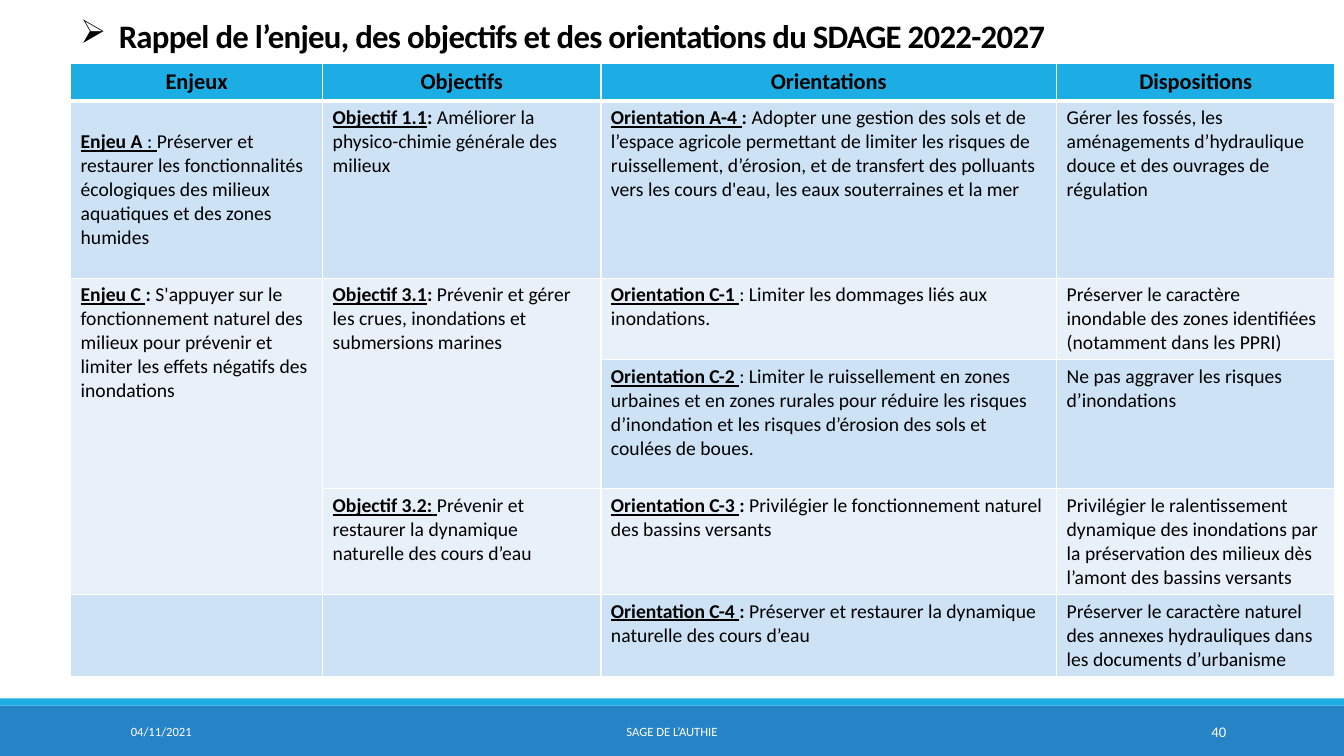
from lxml.etree import SubElement
from pptx import Presentation
from pptx.dml.color import RGBColor
from pptx.enum.shapes import MSO_SHAPE as Shape
from pptx.enum.text import MSO_ANCHOR as Anchor, PP_ALIGN as Align
from pptx.oxml import parse_xml
from pptx.oxml.ns import nsdecls, qn
from pptx.util import Inches, Pt

BLACK = RGBColor(0x00, 0x00, 0x00)
WHITE = RGBColor(0xFF, 0xFF, 0xFF)
CYAN = RGBColor(0x1C, 0xAD, 0xE4)
BLUE = RGBColor(0x26, 0x83, 0xC6)
BAND_DARK = RGBColor(0xCD, 0xE3, 0xF5)
BAND_LIGHT = RGBColor(0xE8, 0xF1, 0xFA)

COLUMN_WIDTHS = [2.5, 2.76, 4.52, 2.76]
ROW_HEIGHTS = [0.37, 1.76, 0.81, 1.28, 1.05, 0.81]
HEADERS = ["Enjeux", "Objectifs", "Orientations", "Dispositions"]
MERGES = [((2, 0), (4, 0)), ((2, 1), (3, 1))]

# Each body cell is a list of (style, text): b is bold, u is underlined
BODY = [
    [[("bu", "Enjeu A "), ("u", ": "),
      ("", "Préserver et restaurer les fonctionnalités écologiques des milieux "
           "aquatiques et des zones humides")],
     [("bu", "Objectif 1.1"), ("b", ": "),
      ("", "Améliorer la physico-chimie générale des milieux")],
     [("bu", "Orientation A-4 "), ("b", ": "),
      ("", "Adopter une gestion des sols et de l’espace agricole permettant de limiter "
           "les risques de ruissellement, d’érosion, et de transfert des polluants vers "
           "les cours d'eau, les eaux souterraines et la mer")],
     [("", "Gérer les fossés, les aménagements d’hydraulique douce et des ouvrages de "
           "régulation")]],
    [[("bu", "Enjeu C "), ("b", ": "),
      ("", "S'appuyer sur le fonctionnement naturel des milieux pour prévenir et limiter "
           "les effets négatifs des inondations")],
     [("bu", "Objectif 3.1"), ("b", ": "),
      ("", "Prévenir et gérer les crues, inondations et submersions marines")],
     [("bu", "Orientation C-1 "), ("", ": Limiter les dommages liés aux inondations.")],
     [("", "Préserver le caractère inondable des zones identifiées (notamment dans les "
           "PPRI)")]],
    [[], [],
     [("bu", "Orientation C-2 "),
      ("", ": Limiter le ruissellement en zones urbaines et en zones rurales pour réduire "
           "les risques d’inondation et les risques d’érosion des sols et coulées de "
           "boues.")],
     [("", "Ne pas aggraver les risques d’inondations")]],
    [[],
     [("bu", "Objectif 3.2: "),
      ("", "Prévenir et restaurer la dynamique naturelle des cours d’eau")],
     [("bu", "Orientation C-3 "), ("b", ": "),
      ("", "Privilégier le fonctionnement naturel des bassins versants")],
     [("", "Privilégier le ralentissement dynamique des inondations par la préservation "
           "des milieux dès l’amont des bassins versants")]],
    [[], [],
     [("bu", "Orientation C-4 "), ("b", ": "),
      ("", "Préserver et restaurer la dynamique naturelle des cours d’eau")],
     [("", "Préserver le caractère naturel des annexes hydrauliques dans les documents "
           "d’urbanisme")]],
]

FOOTER = [
    ("04/11/2021", (1.2, 7.06, 2.7, 0.4), Align.LEFT, 9),
    ("SAGE DE L’AUTHIE", (4.03, 7.06, 5.27, 0.4), Align.CENTER, 9),
    ("40", (10.83, 7.06, 1.43, 0.4), Align.RIGHT, 10.5),
]


def apply_format(target, values):
    for name, value in values.items():
        setattr(target, name, value)


def add_span(para, text, size, color, style=""):
    span = para.add_run()
    span.text = text
    span.font.color.rgb = color
    apply_format(span.font, {"name": "Calibri", "size": Pt(size),
                             "bold": "b" in style, "underline": "u" in style})
    return span


def add_bar(page, top, height, color):
    bar = page.shapes.add_shape(Shape.RECTANGLE, 0, Inches(top), Inches(13.33), Inches(height))
    bar.shadow.inherit = False
    bar.fill.solid()
    bar.fill.fore_color.rgb = color
    bar.line.fill.background()


def add_text(page, text, place, anchor, align, size, color, style=""):
    box = page.shapes.add_textbox(*map(Inches, place))
    apply_format(box.text_frame, {"word_wrap": True, "vertical_anchor": anchor})
    para = box.text_frame.paragraphs[0]
    para.alignment = align
    return para, add_span(para, text, size, color, style)


def add_title(page):
    para, span = add_text(page, "Rappel de l’enjeu, des objectifs et des orientations du "
                          "SDAGE 2022-2027", (0.7, 0.04, 11, 0.56), Anchor.BOTTOM,
                          Align.LEFT, 23.4, BLACK, "b")
    para.line_spacing = 0.85
    # Arrow bullet with a hanging indent, and tightened letters
    properties = para._p.get_or_add_pPr()
    properties.set("marL", str(Inches(0.38)))
    properties.set("indent", str(Inches(-0.38)))
    SubElement(properties, qn("a:buChar")).set("char", "➢")
    span._r.get_or_add_rPr().set("spc", "-50")


def style_cell(cell, color, bottom_width):
    cell.fill.solid()
    cell.fill.fore_color.rgb = color
    properties = cell._tc.get_or_add_tcPr()
    widths = {"lnL": 1, "lnR": 1, "lnT": 1, "lnB": bottom_width}
    for position, (edge, width) in enumerate(widths.items()):
        properties.insert(position, parse_xml(
            f'<a:{edge} {nsdecls("a")} w="{Pt(width)}"><a:solidFill>'
            f'<a:srgbClr val="{WHITE}"/></a:solidFill></a:{edge}>'))


def add_table(page):
    rows, columns = len(ROW_HEIGHTS), len(COLUMN_WIDTHS)
    table = page.shapes.add_table(rows, columns, Inches(0.7), Inches(0.63),
                                  Inches(sum(COLUMN_WIDTHS)), Inches(sum(ROW_HEIGHTS))).table
    for column, width in zip(table.columns, COLUMN_WIDTHS):
        column.width = Inches(width)
    for row, height in zip(table.rows, ROW_HEIGHTS):
        row.height = Inches(height)

    # Header row
    for column, label in enumerate(HEADERS):
        cell = table.cell(0, column)
        style_cell(cell, CYAN, 3)
        para = cell.text_frame.paragraphs[0]
        para.alignment = Align.CENTER
        add_span(para, label, 16, BLACK, "b")

    # Body rows in alternating bands
    for row, contents in enumerate(BODY, start=1):
        for column, parts in enumerate(contents):
            cell = table.cell(row, column)
            style_cell(cell, BAND_DARK if row % 2 else BAND_LIGHT, 1)
            para = cell.text_frame.paragraphs[0]
            para.font.size = Pt(14)
            for style, text in parts:
                add_span(para, text, 14, BLACK, style)

    table.cell(1, 0).margin_top = Inches(0.29)
    for first, last in MERGES:
        table.cell(*first).merge(table.cell(*last))


def main():
    deck = Presentation()
    apply_format(deck, {"slide_width": Inches(13.33), "slide_height": Inches(7.5)})
    page = deck.slides.add_slide(deck.slide_layouts[6])

    # Footer band
    add_bar(page, 7, 0.5, BLUE)
    add_bar(page, 6.93, 0.07, CYAN)
    for text, place, align, size in FOOTER:
        add_text(page, text, place, Anchor.MIDDLE, align, size, WHITE)

    # Main content
    add_table(page)
    add_title(page)
    deck.save("out.pptx")


if __name__ == "__main__":
    main()
